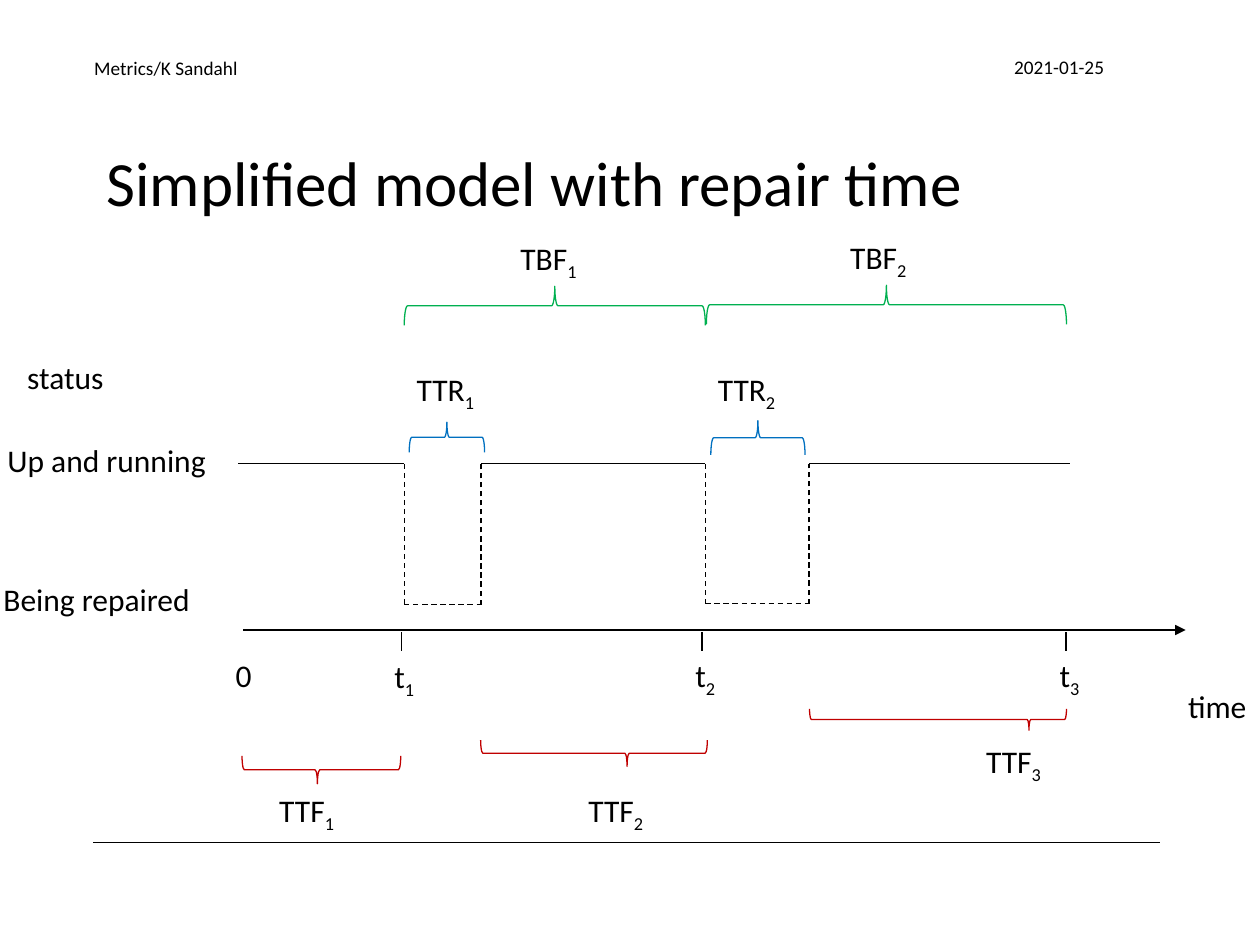
import pptx
import pptx.util
from lxml import etree
from pptx.dml.color import RGBColor
from pptx.enum.dml import MSO_LINE
from pptx.enum.shapes import MSO_CONNECTOR, MSO_SHAPE
from pptx.enum.text import MSO_ANCHOR, MSO_AUTO_SIZE, PP_ALIGN
from pptx.oxml.ns import qn

Cm, Pt = pptx.util.Cm, pptx.util.Pt

BLACK = RGBColor(0, 0, 0)
RED = RGBColor(0xC0, 0, 0)
BLUE = RGBColor(0, 0x70, 0xC0)
GREEN = RGBColor(0, 0xB0, 0x50)

LABEL_H = 1.02
AXIS_Y = 12.7
UP_Y = 9.35
TICK_TOP, TICK_BOTTOM = 12.75, 13.13

HEADINGS = [
    ("Simplified model with repair time", 1.9, 2.77, 21.49, 2.31, 36, PP_ALIGN.LEFT, MSO_ANCHOR.TOP),
    ("2021-01-25", 18.52, 0.99, 3.99, 0.74, 11, PP_ALIGN.RIGHT, MSO_ANCHOR.TOP),
    ("Metrics/K Sandahl", 1.65, 0.99, 16.2, 0.74, 11, PP_ALIGN.LEFT, MSO_ANCHOR.BOTTOM),
]
LABELS = [
    ("status", "", 0.3, 7.09, 2.24),
    ("Up and running", "", -0.1, 8.76, 4.9),
    ("Being repaired", "", -0.18, 11.56, 4.67),
    ("time", "", 23.7, 13.72, 1.73),
    ("0", "", 4.5, 13.11, 0.86),
    ("t", "1", 7.7, 13.13, 0.91),
    ("t", "2", 13.77, 13.11, 0.91),
    ("t", "3", 21.11, 13.11, 0.91),
    ("TTF", "1", 5.38, 15.82, 1.93),
    ("TTF", "2", 11.61, 15.82, 1.93),
    ("TTF", "3", 19.63, 14.83, 1.93),
    ("TTR", "1", 8.15, 7.34, 2.01),
    ("TTR", "2", 14.22, 7.34, 2.01),
    ("TBF", "1", 10.24, 4.7, 1.96),
    ("TBF", "2", 16.89, 4.67, 1.96),
]
BRACES = [
    (4.88, 15.24, 3.2, 0.56, RED, 0.475, True),
    (9.69, 14.92, 4.57, 0.53, RED, 0.646, True),
    (16.32, 14.29, 5.18, 0.43, RED, 0.854, True),
    (8.25, 8.51, 1.52, 0.61, BLUE, 0.5, False),
    (14.33, 8.48, 1.9, 0.69, BLUE, 0.5, False),
    (8.15, 5.77, 6.07, 0.79, GREEN, 0.5, False),
    (14.24, 5.75, 7.26, 0.79, GREEN, 0.5, False),
]
UPTIMES = [(4.8, 8.15), (9.7, 14.22), (16.31, 21.56)]
REPAIRS = [(8.15, 9.7, 12.19), (14.22, 16.31, 12.17)]
TICKS = [8.1, 14.15, 21.49]

prs = pptx.Presentation()
prs.slide_width, prs.slide_height = Cm(25.4), Cm(19.05)
s = prs.slides.add_slide(prs.slide_layouts[6])


def add_line(x1, y1, x2, y2, dashed=False, arrow=False):
    c = s.shapes.add_connector(MSO_CONNECTOR.STRAIGHT, Cm(x1), Cm(y1), Cm(x2), Cm(y2))
    c.line.color.rgb = BLACK
    c.line.width = Pt(0.75)
    if dashed:
        c.line.dash_style = MSO_LINE.DASH
    if arrow:
        etree.SubElement(c.line._get_or_add_ln(), qn("a:tailEnd"), type="triangle")
    etree.SubElement(c._element.spPr, qn("a:effectLst"))


def add_text(text, x, y, w, h, size):
    tf = s.shapes.add_textbox(Cm(x), Cm(y), Cm(w), Cm(h)).text_frame
    tf.text = text
    p = tf.paragraphs[0]
    p.font.size = Pt(size)
    format_run(p.runs[0], size)
    return tf


def format_run(r, size):
    r.font.name = "Calibri"
    r.font.size = Pt(size)
    r.font.color.rgb = BLACK


def add_label(text, subscript, x, y, w):
    tf = add_text(text, x, y, w, LABEL_H, 18)
    tf.word_wrap = False
    tf.auto_size = MSO_AUTO_SIZE.SHAPE_TO_FIT_TEXT
    if subscript:
        r = tf.paragraphs[0].add_run()
        r.text = subscript
        format_run(r, 18)
        r.font._element.set("baseline", "-25000")


def add_brace(x, y, length, depth, color, point, down):
    left, top = x + (length - depth) / 2, y + (depth - length) / 2
    sp = s.shapes.add_shape(MSO_SHAPE.RIGHT_BRACE, Cm(left), Cm(top), Cm(depth), Cm(length))
    sp.rotation = 270
    sp.adjustments[0], sp.adjustments[1] = 0.083, point
    if down:
        sp._element.spPr.find(qn("a:xfrm")).set("flipH", "1")
    sp.shadow.inherit = False
    sp.fill.background()
    sp.line.color.rgb = color
    sp.line.width = Pt(0.75)


add_line(1.88, 16.99, 23.39, 16.99)
for text, x, y, w, h, size, align, anchor in HEADINGS:
    tf = add_text(text, x, y, w, h, size)
    tf.word_wrap = True
    tf.vertical_anchor = anchor
    tf.paragraphs[0].alignment = align

add_line(4.9, AXIS_Y, 23.9, AXIS_Y, arrow=True)
for x in TICKS:
    add_line(x, TICK_TOP, x, TICK_BOTTOM)
for start, end in UPTIMES:
    add_line(start, UP_Y, end, UP_Y)
for start, end, down_y in REPAIRS:
    add_line(start, UP_Y, start, down_y, dashed=True)
    add_line(start, down_y, end, down_y, dashed=True)
    add_line(end, down_y, end, UP_Y, dashed=True)
for brace in BRACES:
    add_brace(*brace)
for label in LABELS:
    add_label(*label)

prs.save("out.pptx")
